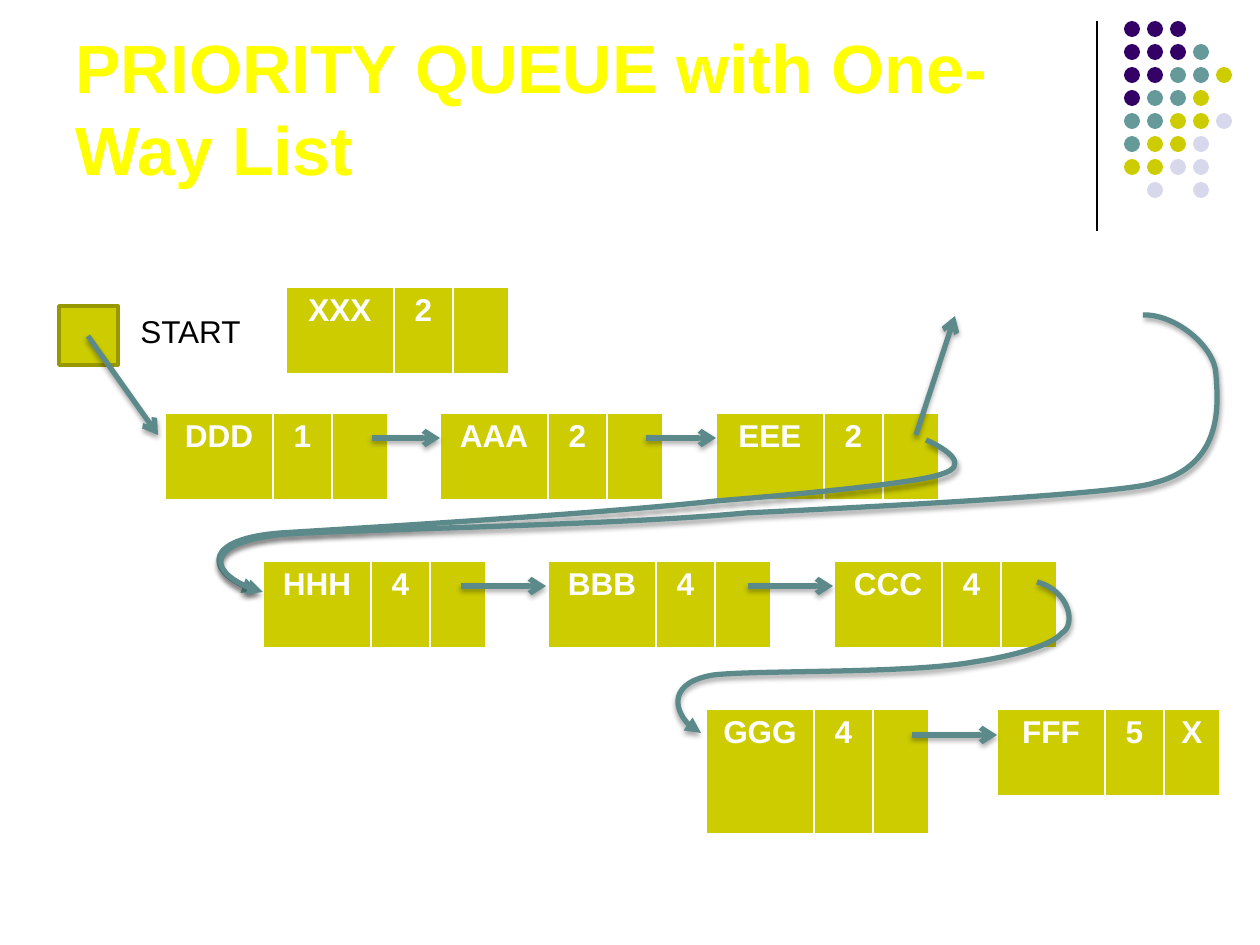
from typing import NamedTuple

from lxml import etree
from pptx import Presentation
from pptx import util as u
from pptx.dml.color import RGBColor
from pptx.enum import shapes, text
from pptx.oxml import parse_xml
from pptx.oxml.ns import qn

PX = 914400 / 126
NS = 'xmlns:a="http://schemas.openxmlformats.org/drawingml/2006/main"'
FONT = "Arial"
OLIVE, TEAL, WHITE, BLACK = "CCCC00", "5C8A8A", "FFFFFF", "000000"
DOT_COLORS = {"P": "330066", "T": "669999", "O": OLIVE, "L": "D8D8EC"}
DOT_ROWS = ["PPP", "PPPT", "PPTTO", "PTTO", "TTOOL", "TOOL", "OOLL", " L L"]
DOT_LEFT, DOT_TOP, DOT_PITCH, DOT_SIZE = 1124, 21, 23, 16
COLUMNS = [108, 59, 56]
BORDERS = {"lnL": 1, "lnR": 1, "lnT": 1, "lnB": 3}


class Node(NamedTuple):
    left: int
    top: int
    name: str
    priority: str
    link: str = ""
    height: int = 88


class Arrow(NamedTuple):
    x1: int
    y1: int
    x2: int
    y2: int


class Curve(NamedTuple):
    """A start point, then three Bezier points for each segment."""
    start: tuple[int, int]
    points: list[tuple[int, int]]


NODES = [
    Node(286, 287, "XXX", "2"),
    Node(165, 413, "DDD", "1"),
    Node(440, 413, "AAA", "2"),
    Node(716, 413, "EEE", "2"),
    Node(263, 561, "HHH", "4"),
    Node(548, 561, "BBB", "4"),
    Node(834, 561, "CCC", "4"),
    Node(706, 709, "GGG", "4", height=126),
    Node(997, 709, "FFF", "5", "X"),
]
ARROWS = [
    Arrow(372, 438, 440, 438),
    Arrow(646, 438, 716, 438),
    Arrow(461, 586, 546, 586),
    Arrow(748, 586, 833, 586),
    Arrow(912, 735, 997, 735),
    Arrow(88, 336, 158, 435),
    Arrow(916, 435, 955, 316),
]
CURVES = [
    Curve((926, 440), [
        (951, 451), (968, 466), (942, 474),
        (910, 486), (716, 501), (716, 501),
        (597, 514), (362, 528), (281, 533),
        (203, 539), (208, 577), (258, 591)]),
    Curve((1143, 315), [
        (1176, 314), (1215, 347), (1216, 374),
        (1218, 402), (1225, 465), (1154, 483),
        (1119, 496), (746, 513), (746, 513),
        (620, 525), (375, 529), (289, 534),
        (203, 541), (209, 578), (263, 592)]),
    Curve((1037, 582), [
        (1070, 591), (1076, 625), (1062, 633),
        (1046, 652), (974, 662), (974, 662),
        (908, 674), (759, 670), (714, 675),
        (669, 682), (673, 721), (701, 733)]),
]


def px(*lengths: int) -> list[int]:
    return [round(length * PX) for length in lengths]


def color(value: str) -> RGBColor:
    return RGBColor.from_string(value)


def add_span(para, words: str, size: int, ink: str, bold: bool = False) -> None:
    span = para.add_run()
    span.text = words
    span.font.name, span.font.size, span.font.bold = FONT, u.Pt(size), bold
    span.font.color.rgb = color(ink)


def add_shape(page, kind, left: int, top: int, width: int, height: int, fill: str):
    shape = page.shapes.add_shape(kind, *px(left, top, width, height))
    shape.shadow.inherit = False
    shape.fill.solid()
    shape.fill.fore_color.rgb = color(fill)
    shape.line.fill.background()
    return shape


def add_label(page, bounds: tuple[int, int, int, int], words: str, size: int,
              ink: str, bold: bool, wrap: bool, anchor) -> None:
    frame = page.shapes.add_textbox(*px(*bounds)).text_frame
    frame.word_wrap, frame.vertical_anchor = wrap, anchor
    add_span(frame.paragraphs[0], words, size, ink, bold)


def add_dots(page) -> None:
    for row, codes in enumerate(DOT_ROWS):
        for column, code in enumerate(codes):
            if code in DOT_COLORS:
                add_shape(page, shapes.MSO_SHAPE.OVAL,
                          DOT_LEFT + column * DOT_PITCH, DOT_TOP + row * DOT_PITCH,
                          DOT_SIZE, DOT_SIZE, DOT_COLORS[code])


def add_node(page, node: Node) -> None:
    bounds = px(node.left, node.top, sum(COLUMNS), node.height)
    table = page.shapes.add_table(1, len(COLUMNS), *bounds).table
    table.first_row = table.horz_banding = False
    for index, words in enumerate([node.name, node.priority, node.link]):
        table.columns[index].width = px(COLUMNS[index])[0]
        cell = table.cell(0, index)
        properties = cell._tc.get_or_add_tcPr()
        for side, points in BORDERS.items():
            properties.append(parse_xml(
                f'<a:{side} {NS} w="{u.Pt(points)}"><a:solidFill>'
                f'<a:srgbClr val="{WHITE}"/></a:solidFill></a:{side}>'))
        cell.fill.solid()
        cell.fill.fore_color.rgb = color(OLIVE)
        para = cell.text_frame.paragraphs[0]
        para.alignment = text.PP_ALIGN.CENTER
        if words:
            add_span(para, words, 18, WHITE, True)


def add_line(page, ends: Arrow):
    line = page.shapes.add_connector(shapes.MSO_CONNECTOR.STRAIGHT, *px(*ends))
    line.line.color.rgb = color(BLACK)
    line.line.width = u.Pt(0.75)
    etree.SubElement(line._element.spPr, qn("a:effectLst"))
    return line


def style_link(link, head: str) -> None:
    """Give a line its teal stroke, arrowhead and soft shadow below."""
    link.line.color.rgb = color(TEAL)
    link.line.width = u.Pt(3)
    etree.SubElement(link.line._get_or_add_ln(), qn("a:tailEnd"), type=head)
    link._element.spPr.find(qn("a:effectLst")).append(parse_xml(
        f'<a:outerShdw {NS} blurRad="{u.Pt(3.1)}" dist="{u.Pt(1.8)}" '
        f'dir="5400000" rotWithShape="0"><a:srgbClr val="{BLACK}">'
        '<a:alpha val="35000"/></a:srgbClr></a:outerShdw>'))


def add_curve(page, curve: Curve) -> None:
    builder = page.shapes.build_freeform(*curve.start, scale=PX)
    builder.add_line_segments(curve.points, close=False)
    shape = builder.convert_to_shape()
    steps = list(shape._element.iter(qn("a:lnTo")))
    outline = steps[0].getparent()
    for first in range(0, len(steps), 3):
        bezier = etree.SubElement(outline, qn("a:cubicBezTo"))
        for step in steps[first:first + 3]:
            bezier.append(step[0])
            outline.remove(step)
    shape.fill.background()
    shape.shadow.inherit = False
    style_link(shape, "triangle")


def main() -> None:
    deck = Presentation()
    deck.slide_width, deck.slide_height = u.Inches(10), u.Inches(7.5)
    page = deck.slides.add_slide(deck.slide_layouts[6])

    add_line(page, Arrow(1097, 21, 1097, 231))
    add_dots(page)
    add_label(page, (63, 16, 1040, 179), "PRIORITY QUEUE with One-Way List",
              39, "FFFF00", True, True, text.MSO_ANCHOR.BOTTOM)
    for node in NODES:
        add_node(page, node)

    start = add_shape(page, shapes.MSO_SHAPE.RECTANGLE, 59, 306, 59, 59, OLIVE)
    start.line.color.rgb = color("979700")
    start.line.width = u.Pt(2)
    add_label(page, (128, 306, 127, 50), "START", 18, BLACK, False, False,
              text.MSO_ANCHOR.TOP)

    for arrow in ARROWS:
        style_link(add_line(page, arrow), "arrow")
    for curve in CURVES:
        add_curve(page, curve)
    deck.save("out.pptx")


if __name__ == "__main__":
    main()
